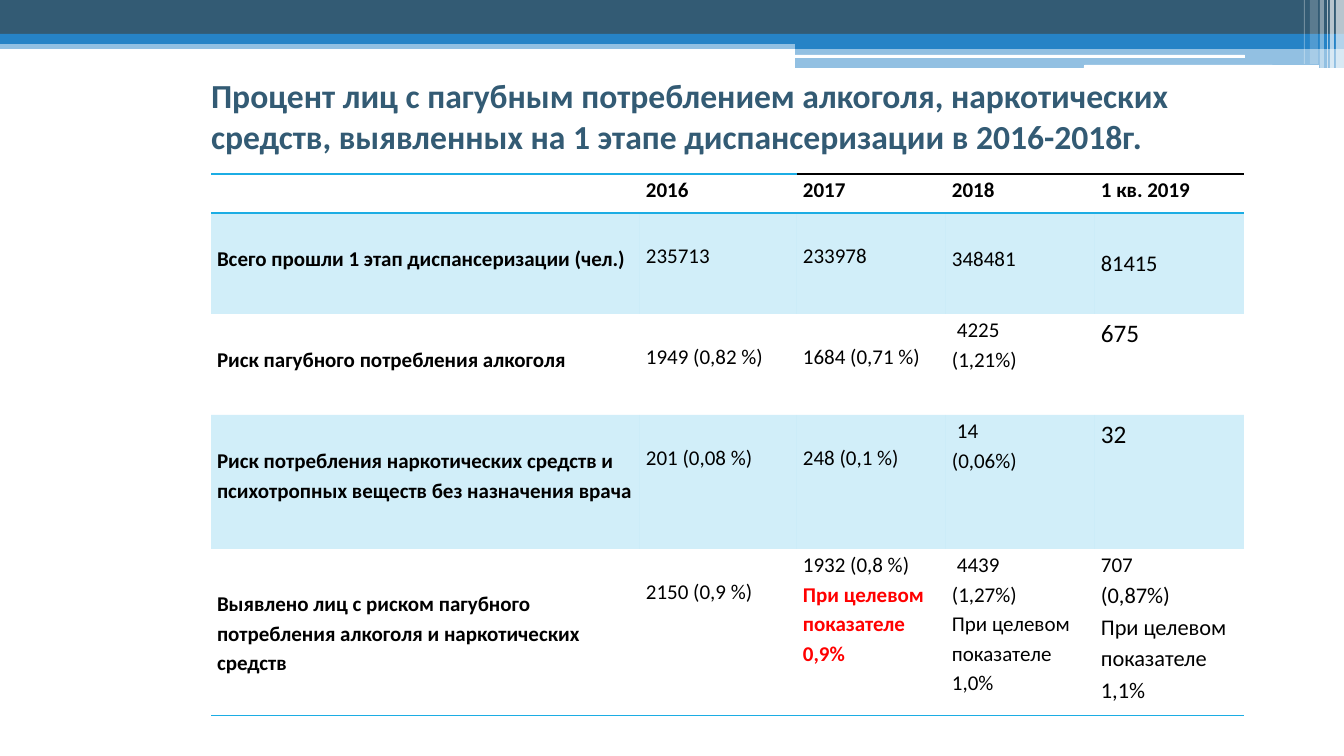
from lxml.etree import SubElement as Sub
from pptx import Presentation
from pptx.dml.color import RGBColor as Rgb
from pptx.enum.shapes import MSO_SHAPE as Shape
from pptx.enum.text import MSO_ANCHOR as Anchor, PP_ALIGN as Align
from pptx.oxml.ns import qn
from pptx.util import Pt

PX = 9071  # EMU in one px
HUE = {"navy": "335B74", "blue": "2683C6", "sky": "1CADE4",
       "white": "FFFFFF", "black": "000000", "red": "FF0000"}


def write(para, text, size=15, bold=False, hue="black", gap=1.15, left=0):
    para.alignment = Align.LEFT
    para.line_spacing = gap
    if left:
        para._p.get_or_add_pPr().set("marL", str(left * PX))
    run = para.add_run()
    run.text = text
    font = run.font
    font.name, font.size, font.bold = "Calibri", Pt(size), bold
    font.color.rgb = Rgb.from_string(HUE[hue])


def paint(fill, hue, alpha=100):
    fill.solid()
    fill.fore_color.rgb = Rgb.from_string(HUE[hue])
    if alpha < 100:
        tone = fill._xPr.find(qn("a:solidFill"))[0]
        Sub(tone, qn("a:alpha")).set("val", str(alpha * 1000))


deck = Presentation()
deck.slide_width, deck.slide_height = 1344 * PX, 756 * PX
slide = deck.slides.add_slide(deck.slide_layouts[5])

# Header bands and light stripes: left, top, width, height, colour, opacity
bands = [
    (0, 40, 1344, 9, "blue", 50),
    (0, 0, 1344, 34, "navy", 100),
    (0, 34, 1344, 10, "blue", 100),
    (795, 39, 549, 10, "blue", 100),
    (795, 48, 549, 20, "blue", 50),
    (794, 55, 451, 3, "white", 100),
    (1084, 65, 235, 4, "white", 100),
    (1336, 0, 8, 68, "white", 65),
    (1330, 0, 4, 68, "white", 65),
    (1327, 0, 1, 68, "white", 60),
    (1320, 0, 4, 68, "white", 40),
    (1310, 0, 8, 64, "white", 20),
    (1304, 0, 1, 64, "white", 30),
]
for x, y, w, h, hue, alpha in bands:
    kind = Shape.ROUNDED_RECTANGLE if h in (3, 4) else Shape.RECTANGLE
    band = slide.shapes.add_shape(kind, x * PX, y * PX, w * PX, h * PX)
    band.shadow.inherit = False
    band.line.fill.background()
    paint(band.fill, hue, alpha)

# Title
title = slide.shapes.title
title.left, title.top, title.width, title.height = 201 * PX, 33 * PX, 1024 * PX, 165 * PX
title.text_frame.vertical_anchor = Anchor.MIDDLE
title.text_frame.word_wrap = True
write(title.text_frame.paragraphs[0],
      "Процент лиц с пагубным потреблением алкоголя, наркотических средств, "
      "выявленных на 1 этапе диспансеризации в 2016-2018г.",
      size=24, bold=True, hue="navy", gap=1.0)

# Table content: lines of a cell are split by "|"
rows = [
    ["", "2016", "2017", "2018", "1 кв. 2019"],
    ["Всего прошли 1 этап диспансеризации (чел.)",
     "235713", "233978", "348481", "81415"],
    ["Риск пагубного потребления алкоголя",
     "1949 (0,82 %)", "1684 (0,71 %)", "4225|(1,21%)", "675"],
    ["Риск потребления наркотических средств и психотропных веществ без назначения врача",
     "201 (0,08 %)", "248 (0,1 %)", "14|(0,06%)", "32"],
    ["Выявлено лиц с риском пагубного потребления алкоголя и наркотических средств",
     "2150 (0,9 %)", "1932 (0,8 %)|При целевом показателе 0,9%",
     "4439|(1,27%)|При целевом показателе 1,0%",
     "707|(0,87%)|При целевом показателе 1,1%"],
]
wide = [429, 157, 149, 149, 149]
high = [39, 101, 101, 134, 167]
drop = [[0] * 5, [30, 27, 27, 30, 33], [30, 27, 27, 0, 0],
        [30, 27, 27, 0, 0], [0, 27, 0, 0, 0]]  # top inset of each cell
sizes = {"81415": 16, "675": 18, "32": 18, "(0,87%)": 16,
         "При целевом показателе 1,1%": 16}
inset = {"4225", "14", "4439"}
goal = "При целевом показателе 0,9%"

# Table
frame = slide.shapes.add_table(5, 5, 211 * PX, 174 * PX, sum(wide) * PX, sum(high) * PX)
table = frame.table
table.first_row = table.horz_banding = False
table._tbl.tblPr[0].text = "{2D5ABB26-0587-4C30-8999-92F81FD0307C}"  # no style, no grid
for col, w in zip(table.columns, wide):
    col.width = w * PX
for r, row in enumerate(rows):
    table.rows[r].height = high[r] * PX
    for c, text in enumerate(row):
        cell = table.cell(r, c)
        cell.margin_left = cell.margin_right = 6 * PX
        cell.margin_top, cell.margin_bottom = drop[r][c] * PX, 0
        cell.vertical_anchor = Anchor.MIDDLE if (r, c) == (4, 0) else Anchor.TOP

        # Rules above and below the header, and under the last row
        edges = []
        if r == 0:
            edges.append(("a:lnT", "sky" if c < 2 else "black"))
        if r in (0, 4):
            edges.append(("a:lnB", "sky"))
        for tag, hue in edges:
            line = Sub(cell._tc.get_or_add_tcPr(), qn(tag), w="12700")
            Sub(Sub(line, qn("a:solidFill")), qn("a:srgbClr"), val=HUE[hue])

        if r % 2:
            paint(cell.fill, "sky", 20)
        else:
            cell.fill.background()

        if not text:
            continue
        for i, part in enumerate(text.split("|")):
            body = cell.text_frame
            para = body.add_paragraph() if i else body.paragraphs[0]
            write(para, part, size=sizes.get(part, 15),
                  bold=r == 0 or c == 0 or part == goal,
                  hue="red" if part == goal else "black",
                  left=5 if part in inset else 0)

deck.save("out.pptx")
